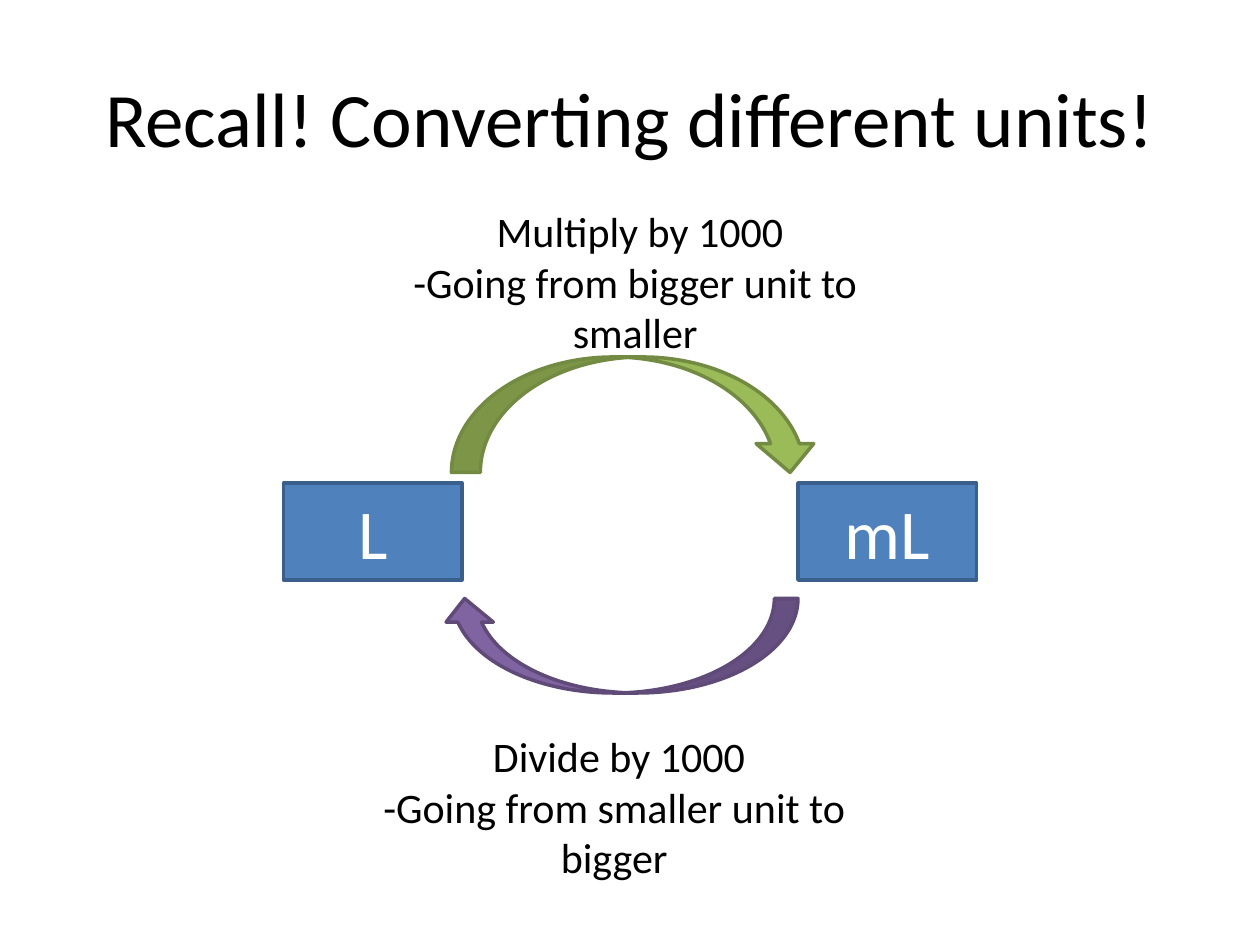
"""Build a slide on converting between litres and millilitres."""
from pptx import Presentation, util as u
from pptx.dml.color import RGBColor
from pptx.enum import shapes, text

COLORS = {
    "text": "000000", "label": "FFFFFF",
    "unit": "4F81BD", "unit_line": "3A5F8C",
    "multiply": "9BBB59", "multiply_line": "738A42",
    "divide": "8064A2", "divide_line": "5F4A78",
}
COLS, ROWS = 120, 90
CELL = u.Inches(10) // COLS


def cells(*counts):
    """Turn grid counts into lengths."""
    return [round(n * CELL) for n in counts]


def rgb(name):
    """Look up a named colour."""
    return RGBColor.from_string(COLORS[name])


def write(sp, lines, size, color="text", anchor=text.MSO_ANCHOR.TOP):
    """Write centred lines of text into a shape."""
    tf = sp.text_frame
    tf.word_wrap = True
    tf.vertical_anchor = anchor
    for i, line in enumerate(lines):
        p = tf.add_paragraph() if i else tf.paragraphs[0]
        p.alignment = text.PP_ALIGN.CENTER
        r = p.add_run()
        r.text = line
        r.font.name = "Calibri"
        r.font.size = u.Pt(size)
        r.font.color.rgb = rgb(color)


def add_text(s, box, lines, size, **fmt):
    """Add a text box on the grid."""
    sp = s.shapes.add_textbox(*cells(*box))
    write(sp, lines, size, **fmt)


def add_shape(s, kind, box, color):
    """Add a filled and outlined preset shape on the grid."""
    sp = s.shapes.add_shape(kind, *cells(*box))
    sp.shadow.inherit = False
    sp.fill.solid()
    sp.fill.fore_color.rgb = rgb(color)
    sp.line.color.rgb = rgb(f"{color}_line")
    sp.line.width = u.Pt(2)
    return sp


def add_unit(s, col, label):
    """Add a labelled unit box."""
    sp = add_shape(s, shapes.MSO_SHAPE.RECTANGLE, (col, 46, 17, 9.25), "unit")
    write(sp, [label], 40, color="label", anchor=text.MSO_ANCHOR.MIDDLE)


def main():
    """Build and save the slide."""
    prs = Presentation()
    prs.slide_width, prs.slide_height = cells(COLS, ROWS)
    s = prs.slides.add_slide(prs.slide_layouts[6])

    add_text(s, (6, 3.6, 108, 15), ["Recall! Converting different units!"], 44,
             anchor=text.MSO_ANCHOR.MIDDLE)
    add_unit(s, 27, "L")
    add_unit(s, 76, "mL")
    add_shape(s, shapes.MSO_SHAPE.CURVED_DOWN_ARROW, (43, 34, 35, 11), "multiply")
    sp = add_shape(s, shapes.MSO_SHAPE.CURVED_UP_ARROW, (42, 57, 34, 9), "divide")
    sp._element.spPr.xfrm.set("flipH", "1")
    add_text(s, (30, 69, 57, 15.75),
             [" Divide by 1000", "-Going from smaller unit to bigger"], 24)
    add_text(s, (33, 19, 55, 15.75),
             [" Multiply by 1000", "-Going from bigger unit to smaller"], 24)
    prs.save("out.pptx")


if __name__ == "__main__":
    main()
